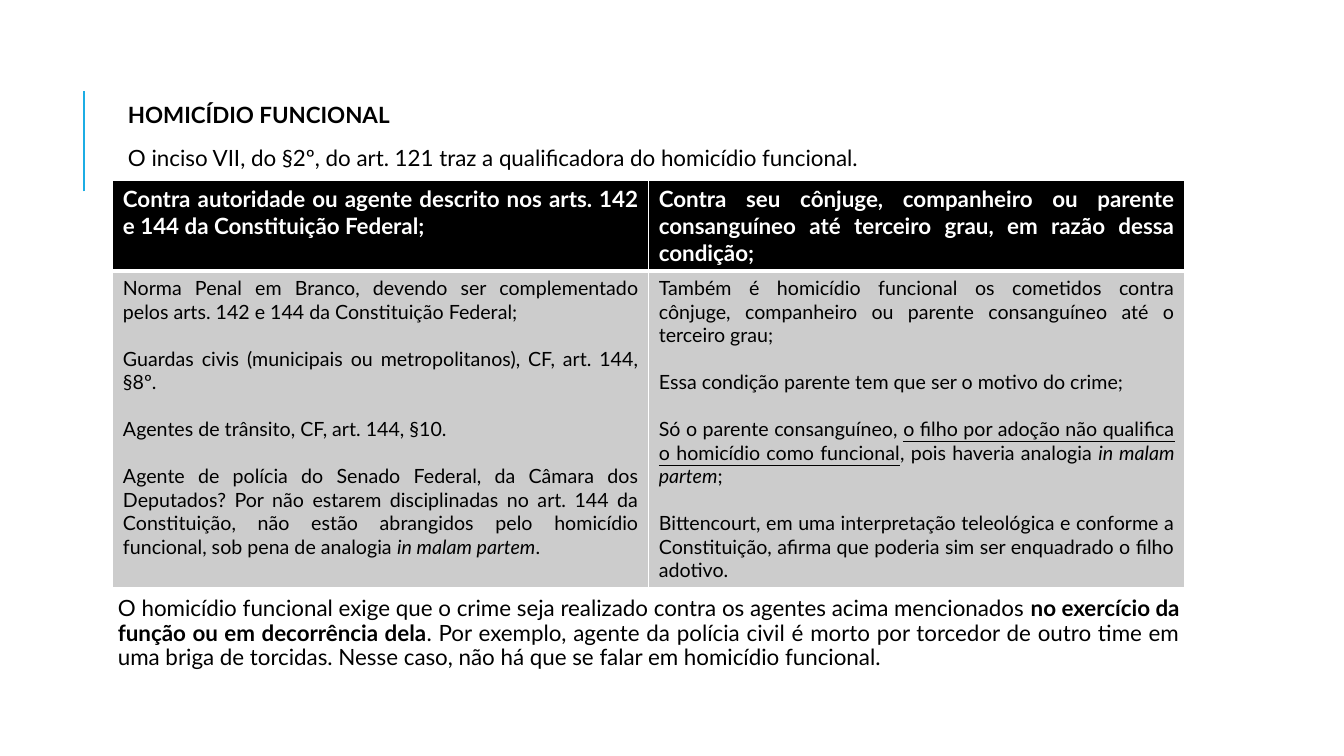
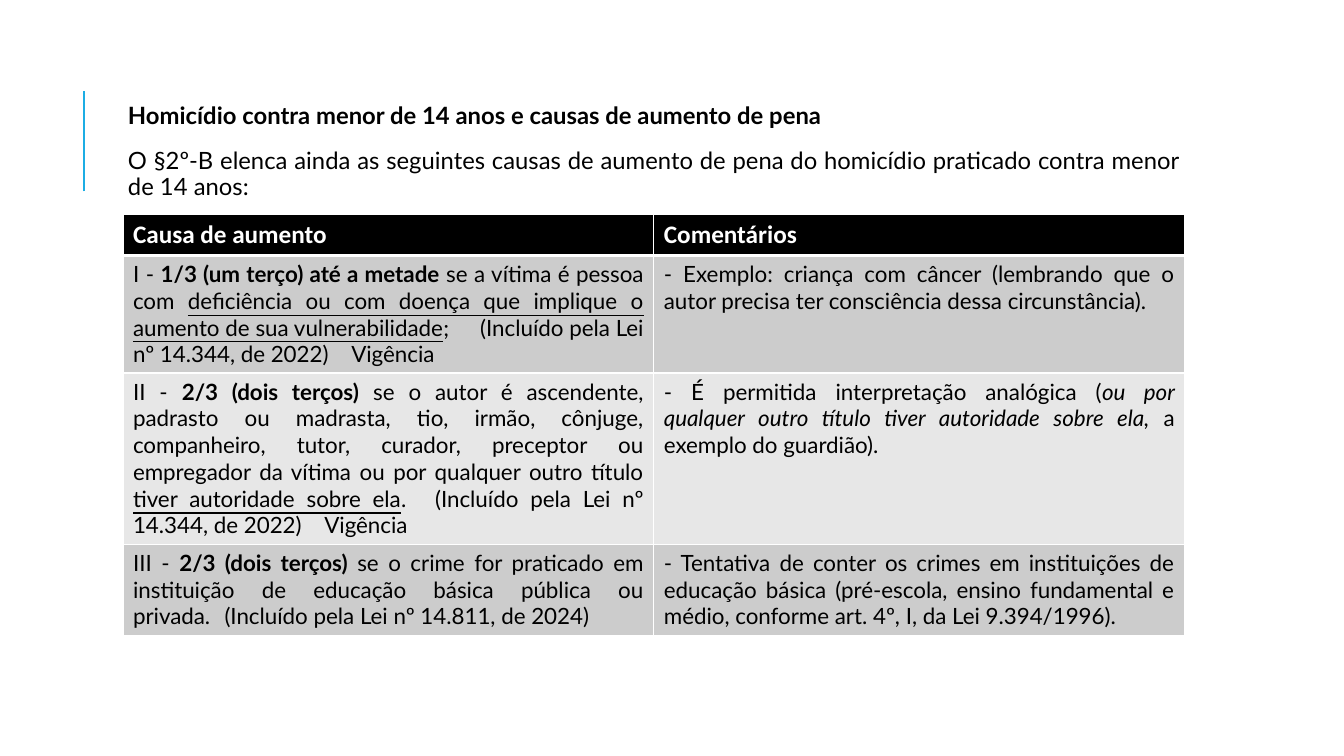
"""Build two slides on qualified homicide, each with a heading and a table."""
import lxml.etree
import pptx
import pptx.dml.color
import pptx.enum.shapes
import pptx.enum.text
import pptx.oxml
import pptx.oxml.ns
import pptx.util

COLOURS = {
    "accent": "1CADE4",
    "text": "000000",
    "header": "000000",
    "white": "FFFFFF",
    "band": "CCCCCC",
    "light_band": "E7E7E7",
}
WIDTH, HEIGHT = pptx.util.Inches(13.33), pptx.util.Inches(7.5)
LEFT, RIGHT, HEADING_TOP = 8.4, 88.15, 13.07
INDENT = 0.75
ALIGN = pptx.enum.text.PP_ALIGN
NBSP = chr(160)

FUNCTIONAL_HEADER = [
    [[("Contra autoridade ou agente descrito nos arts. 142 e 144 da Constituição Federal;", "b")]],
    [[("Contra seu cônjuge, companheiro ou parente consanguíneo até terceiro grau, "
       "em razão dessa condição;", "b")]],
]
FUNCTIONAL_BODY = [[
    [
        [("Norma Penal em Branco, devendo ser complementado pelos arts. 142 e 144 "
          "da Constituição Federal;", "")],
        [("Guardas civis (municipais ou metropolitanos), CF, art. 144, §8º.", "")],
        [("Agentes de trânsito, CF, art. 144, §10.", "")],
        [("Agente de polícia do Senado Federal, da Câmara dos Deputados? Por não estarem "
          "disciplinadas no art. 144 da Constituição, não estão abrangidos pelo homicídio "
          "funcional, sob pena de analogia ", ""), ("in malam partem", "i"), (".", "")],
    ],
    [
        [("Também é homicídio funcional os cometidos contra cônjuge, companheiro ou parente "
          "consanguíneo até o terceiro grau;", "")],
        [("Essa condição parente tem que ser o motivo do crime;", "")],
        [("Só o parente consanguíneo, ", ""),
         ("o filho por adoção não qualifica o homicídio como funcional", "u"),
         (", pois haveria analogia ", ""), ("in malam partem", "i"), (";", "")],
        [("Bittencourt, em uma interpretação teleológica e conforme a Constituição, afirma que "
          "poderia sim ser enquadrado o filho adotivo.", "")],
    ],
]]
FUNCTIONAL_CLOSING = [[
    ("O homicídio funcional exige que o crime seja realizado contra os agentes acima "
     "mencionados ", ""),
    ("no exercício da função ou em decorrência dela", "b"),
    (". Por exemplo, agente da polícia civil é morto por torcedor de outro time em uma briga "
     "de torcidas. Nesse caso, não há que se falar em homicídio funcional.", ""),
]]
INCREASE_HEADER = [[[("Causa de aumento", "b")]], [[("Comentários", "b")]]]
LAW_2022 = [("(Incluído pela Lei nº 14.344, de 2022)", ""), (" ", "", 12), ("Vigência", "")]
INCREASE_BODY = [
    [
        [[("I - ", ""), ("1/3 (um terço) até a metade", "b"), (" se a vítima é pessoa com ", ""),
          ("deficiência ou com doença que implique o aumento de sua vulnerabilidade", "u"),
          (";", ""), (" ", "", 18), *LAW_2022]],
        [[("- Exemplo: criança com câncer (lembrando que o autor precisa ter consciência dessa "
           "circunstância).", "")]],
    ],
    [
        [[("II - ", ""), ("2/3 (dois terços)", "b"),
          (" se o autor é ascendente, padrasto ou madrasta, tio, irmão, cônjuge, companheiro, "
           "tutor, curador, preceptor ou empregador da vítima ou por qualquer outro título ", ""),
          ("tiver autoridade sobre ela", "u"), (".", ""), (" ", "", 12), *LAW_2022]],
        [[("- É permitida interpretação analógica (", ""),
          ("ou por qualquer outro título tiver autoridade sobre ela, ", "i"),
          ("a exemplo do guardião).", "")]],
    ],
    [
        [[("III - ", ""), ("2/3 (dois terços) ", "b"),
          ("se o crime for praticado em instituição de educação básica pública ou privada.", ""),
          (NBSP, "", 6), ("(Incluído pela Lei nº 14.811, de 2024)", "")]],
        [[("- Tentativa de conter os crimes em instituições de educação básica (pré-escola, "
           "ensino fundamental e médio, conforme art. 4º, I, da Lei 9.394/1996).", "")]],
    ],
]


def across(percent):
    """Return a share of the slide's width."""
    return round(WIDTH * percent / 100)


def down(percent):
    """Return a share of the slide's height."""
    return round(HEIGHT * percent / 100)


def colour(name):
    """Return a named colour."""
    return pptx.dml.color.RGBColor.from_string(COLOURS[name])


def add_span(para, text, style, tracking=0, size=16, font="Lato", ink="text"):
    """Add one run; style is any of the letters b, i and u."""
    span = para.add_run()
    span.text = text
    span.font.size = pptx.util.Pt(size)
    span.font.name = font
    span.font.color.rgb = colour(ink)
    span.font.bold = "b" in style
    span.font.italic = "i" in style
    span.font.underline = "u" in style
    if tracking:
        span.font._element.set("spc", str(tracking * 100))


def write(frame, paragraphs, align=ALIGN.JUSTIFY, gap=0, after=0, leading=1.0, **look):
    """Fill a text frame, with a gap before every paragraph but the first."""
    for index, spans in enumerate(paragraphs):
        para = frame.add_paragraph() if index else frame.paragraphs[0]
        para.alignment = align
        para.line_spacing = leading
        para.space_before = pptx.util.Pt(gap if index else 0)
        para.space_after = pptx.util.Pt(after)
        for span in spans:
            add_span(para, *span, **look)


def add_text(page, left, top, height, paragraphs, size=16):
    """Add a justified text box that ends at the right margin."""
    box = page.shapes.add_textbox(across(left), down(top), across(RIGHT - left), down(height))
    frame = box.text_frame
    frame.word_wrap = True
    frame.margin_left = frame.margin_right = pptx.util.Inches(0.05)
    frame.margin_top = frame.margin_bottom = pptx.util.Inches(0.05)
    write(frame, paragraphs, gap=12, after=2, leading=0.9, size=size)


def add_rule(page):
    """Draw the vertical accent line beside the heading."""
    rule = page.shapes.add_connector(
        pptx.enum.shapes.MSO_CONNECTOR.STRAIGHT,
        across(6.25), down(25.33), across(6.25), down(12))
    rule.line.color.rgb = colour("accent")
    rule.line.width = pptx.util.Pt(1.5)
    lxml.etree.SubElement(rule._element.spPr, pptx.oxml.ns.qn("a:effectLst"))


def set_borders(cell, bottom):
    """Give a cell white borders, with the bottom one of its own width."""
    properties = cell._tc.get_or_add_tcPr()
    widths = {"lnL": 1, "lnR": 1, "lnT": 1, "lnB": bottom}
    for index, (tag, points) in enumerate(widths.items()):
        border = pptx.oxml.parse_xml(
            f'<a:{tag} {pptx.oxml.ns.nsdecls("a")} w="{pptx.util.Pt(points)}"><a:solidFill>'
            f'<a:srgbClr val="{COLOURS["white"]}"/></a:solidFill></a:{tag}>')
        properties.insert(index, border)


def fill_cell(cell, paragraphs, fill, border=1, **look):
    """Write, colour and frame one cell."""
    write(cell.text_frame, paragraphs, **look)
    cell.fill.solid()
    cell.fill.fore_color.rgb = colour(fill)
    set_borders(cell, border)


def add_grid(page, left, top, heights, header, body, header_look, body_look):
    """Add a table with equal columns, a black header and banded rows."""
    width = across(RIGHT - left)
    table = page.shapes.add_table(
        len(heights), len(header), across(left), down(top), width, down(sum(heights))).table
    for column in table.columns:
        column.width = width // len(header)
    for row, height in zip(table.rows, heights):
        row.height = down(height)
    for column, paragraphs in enumerate(header):
        fill_cell(table.cell(0, column), paragraphs, "header", 3, ink="white", **header_look)
    for row, cells in enumerate(body, 1):
        for column, paragraphs in enumerate(cells):
            band = "band" if row % 2 else "light_band"
            fill_cell(table.cell(row, column), paragraphs, band, **body_look)


def add_page(deck, title, intro, size):
    """Add a slide with the accent line, a bold title and an introduction."""
    page = deck.slides.add_slide(deck.slide_layouts[6])
    add_rule(page)
    add_text(page, LEFT + INDENT, HEADING_TOP, 11, [[(title, "b")], [(intro, "")]], size)
    return page


def main():
    """Build and save the deck."""
    deck = pptx.Presentation()
    deck.slide_width, deck.slide_height = WIDTH, HEIGHT

    page = add_page(
        deck, "HOMICÍDIO FUNCIONAL",
        "O inciso VII, do §2º, do art. 121 traz a qualificadora do homicídio funcional.", 16)
    add_grid(page, LEFT, 23.87, [12, 41.8], FUNCTIONAL_HEADER, FUNCTIONAL_BODY,
             {}, {"size": 14, "gap": 16.8})
    add_text(page, LEFT, 78.4, 12, FUNCTIONAL_CLOSING)

    page = add_page(
        deck, "Homicídio contra menor de 14 anos e causas de aumento de pena",
        "O §2º-B elenca ainda as seguintes causas de aumento de pena do homicídio praticado "
        "contra menor de 14 anos:", 17)
    add_grid(page, LEFT + INDENT, 28.4, [5.4, 15.55, 22.67, 12], INCREASE_HEADER, INCREASE_BODY,
             {"size": 18, "font": "Calibri", "align": ALIGN.LEFT}, {})
    deck.save("out.pptx")


if __name__ == "__main__":
    main()
